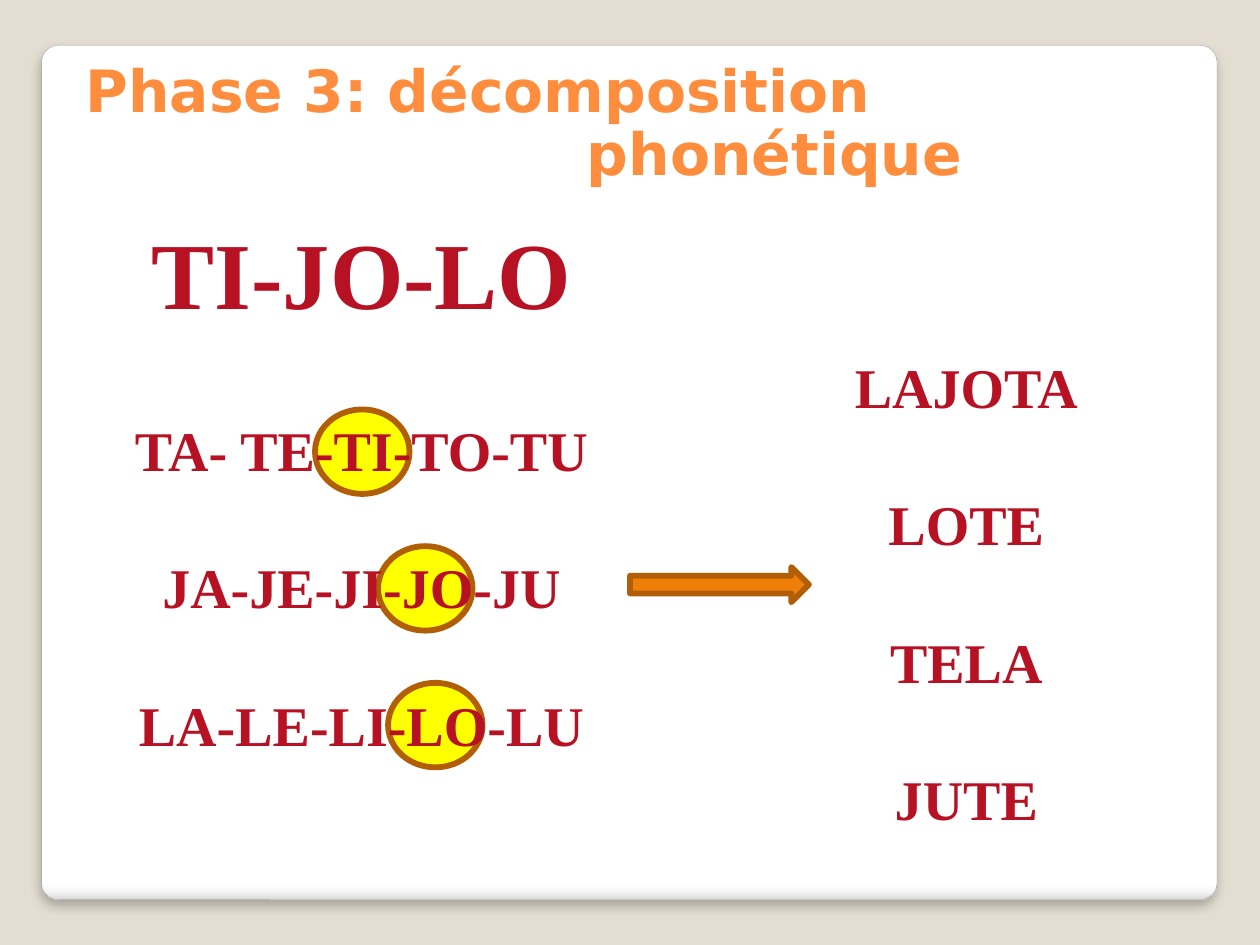
import pptx
import pptx.util
import pptx.dml.color
import pptx.enum.shapes
import pptx.enum.text
import pptx.oxml
import pptx.oxml.ns

Inches, Pt = pptx.util.Inches, pptx.util.Pt
SHAPE = pptx.enum.shapes.MSO_SHAPE
ALIGN = pptx.enum.text.PP_ALIGN
ANCHOR = pptx.enum.text.MSO_ANCHOR
NS = pptx.oxml.ns.nsdecls("a")


def rgb(hex_color):
    return pptx.dml.color.RGBColor.from_string(hex_color)


def apply(target, values):
    for name, value in values.items():
        setattr(target, name, value)


class Deck:
    background, border, syllable = "E3DED1", "B25E07", "B71124"
    title_font = dict(name="DejaVu Sans", size=Pt(33.3), bold=True)
    word_font = dict(name="Times New Roman", bold=True)

    def __init__(self, width, height):
        self.prs = pptx.Presentation()
        apply(self.prs, dict(slide_width=Inches(width), slide_height=Inches(height)))
        self.s = self.prs.slides.add_slide(self.prs.slide_layouts[6])
        fill = self.s.background.fill
        fill.solid()
        fill.fore_color.rgb = rgb(self.background)

    def shape(self, kind, box, color, line, weight):
        sp = self.s.shapes.add_shape(kind, *map(Inches, box))
        sp.shadow.inherit = False
        sp.fill.solid()
        sp.fill.fore_color.rgb = rgb(color)
        sp.line.color.rgb = rgb(line)
        sp.line.width = Pt(weight)
        return sp

    def panel(self, box):
        """Add the white rounded card with a shaded lower edge and a soft shadow."""
        sp = self.shape(SHAPE.ROUNDED_RECTANGLE, box, "FFFFFF", "A4A4A4", 0.16)
        sp.adjustments[0] = 0.02
        stops = [(0, "FFFFFF"), (98, "FFFFFF"), (99, "F7F7F7"), (100, "DADADA")]
        gs = "".join(f'<a:gs pos="{pos * 1000}"><a:srgbClr val="{c}"/></a:gs>' for pos, c in stops)
        props = sp._element.spPr
        props.replace(props.find(pptx.oxml.ns.qn("a:solidFill")), pptx.oxml.parse_xml(
            f'<a:gradFill {NS}><a:gsLst>{gs}</a:gsLst><a:lin ang="5400000"/></a:gradFill>'))
        props.find(pptx.oxml.ns.qn("a:effectLst")).append(pptx.oxml.parse_xml(
            f'<a:outerShdw {NS} blurRad="{Pt(6)}" dist="{Pt(4)}" dir="5400000">'
            '<a:srgbClr val="000000"><a:alpha val="25000"/></a:srgbClr></a:outerShdw>'))

    def text(self, box, lines, font, color, paragraph, gap=0, anchor=ANCHOR.TOP):
        """Add one paragraph per line, with gap points between them."""
        tf = self.s.shapes.add_textbox(*map(Inches, box)).text_frame
        apply(tf, dict(word_wrap=True, vertical_anchor=anchor))
        for i, line in enumerate(lines):
            p = tf.add_paragraph() if i else tf.paragraphs[0]
            apply(p, paragraph)
            p.space_before = Pt(gap if i else 0)
            r = p.add_run()
            r.text = line
            apply(r.font, font)
            r.font.color.rgb = rgb(color)
        return tf

    def title(self, box, line, hang):
        """Add the title; its wrapped line is indented by hang inches."""
        tf = self.text(box, [line], self.title_font, "FF8D3E",
                       dict(line_spacing=0.9), anchor=ANCHOR.MIDDLE)
        props = tf.paragraphs[0]._p.get_or_add_pPr()
        props.set("marL", str(Inches(hang)))
        props.set("indent", str(-Inches(hang)))

    def words(self, box, lines, size=32):
        self.text(box, lines, dict(self.word_font, size=Pt(size)), self.syllable,
                  dict(alignment=ALIGN.CENTER), gap=40)

    def highlight(self, left, top):
        self.shape(SHAPE.OVAL, (left, top, 0.75, 0.67), "FFFF00", self.border, 3.35)

    def arrow(self, box):
        self.shape(SHAPE.RIGHT_ARROW, box, "F07F09", self.border, 3.35)


def main():
    deck = Deck(10, 7.5)
    deck.panel((0.33, 0.36, 9.33, 6.78))
    deck.words((5.92, 2.75, 3.5, 4.78), ["LAJOTA", "LOTE", "TELA", "JUTE"])
    for row, left in enumerate([2.5, 3, 3.08]):
        deck.highlight(left, 3.25 + 1.085 * row)
    deck.title((0.58, 0.42, 8.95, 1.15), "Phase 3: décomposition phonétique", 3.98)
    deck.arrow((5, 4.5, 1.42, 0.28))
    deck.words((0.83, 1.66, 4.08, 1.01), ["TI-JO-LO"], size=54)
    deck.words((0.83, 3.25, 4.08, 2.79),
               ["TA- TE-TI-TO-TU", "JA-JE-JI-JO-JU", "LA-LE-LI-LO-LU"])
    deck.prs.save("out.pptx")


if __name__ == "__main__":
    main()
